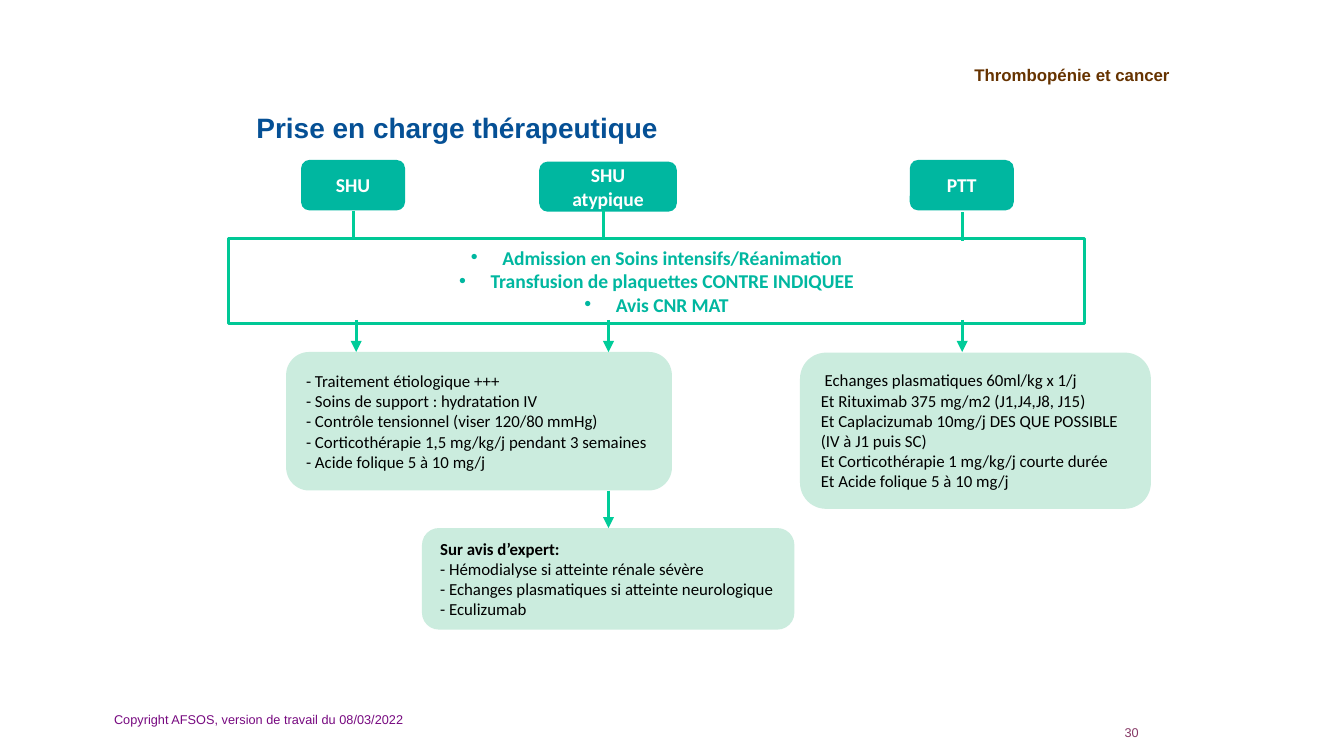
from lxml.etree import SubElement
from pptx import Presentation
from pptx.dml.color import RGBColor
from pptx.enum.shapes import MSO_CONNECTOR, MSO_SHAPE
from pptx.enum.text import MSO_ANCHOR, PP_ALIGN
from pptx.oxml.ns import qn
from pptx.util import Pt


def color(hex_value):
    return RGBColor.from_string(hex_value)


class CareSlide:
    """Style of the care pathway and the slide it is drawn on."""

    HEADER = dict(name="Arial", size=Pt(9), bold=True, color="663300")
    TITLE = dict(name="Arial", size=Pt(15), bold=True, color="055095")
    COPYRIGHT = dict(name="Arial", size=Pt(6.8), bold=False, color="770980")
    PAGE = dict(COPYRIGHT, color="863966")
    DISEASE = dict(name="Calibri", size=Pt(10.5), bold=True, color="FFFFFF")
    COMMON = dict(DISEASE, color="00B7A0")
    CARE = dict(name="Calibri", size=Pt(9), bold=False, color="000000")
    TEAL, MINT, BORDER, ARROW = "00B7A0", "CBECDE", "00C896", "00CC99"

    def __init__(self, slide):
        self.slide = slide

    def set_lines(self, frame, lines, style, align=PP_ALIGN.LEFT,
                  anchor=MSO_ANCHOR.MIDDLE, bullet=False):
        frame.word_wrap = True
        frame.vertical_anchor = anchor
        for index, line in enumerate(lines):
            paragraph = frame.paragraphs[0] if index == 0 else frame.add_paragraph()
            paragraph.alignment = align
            if bullet:
                properties = paragraph._p.get_or_add_pPr()
                properties.set("marL", str(Pt(16.9)))
                properties.set("indent", str(-Pt(16.9)))
                SubElement(properties, qn("a:buFont"), typeface="Arial")
                SubElement(properties, qn("a:buChar"), char="•")
            run = paragraph.add_run()
            run.text = line
            for key, value in style.items():
                if key == "color":
                    run.font.color.rgb = color(value)
                else:
                    setattr(run.font, key, value)
        return frame

    def text(self, box, line, style, **layout):
        area = self.slide.shapes.add_textbox(*map(Pt, box))
        return self.set_lines(area.text_frame, [line], style, **layout)

    def panel(self, box, lines, style, fill=None, **layout):
        kind = MSO_SHAPE.ROUNDED_RECTANGLE if fill else MSO_SHAPE.RECTANGLE
        panel = self.slide.shapes.add_shape(kind, *map(Pt, box))
        panel.shadow.inherit = False
        if fill:
            panel.fill.solid()
            panel.fill.fore_color.rgb = color(fill)
            panel.line.fill.background()
        else:
            panel.fill.background()
            panel.line.color.rgb = color(self.BORDER)
            panel.line.width = Pt(1.5)
        return self.set_lines(panel.text_frame, lines, style, **layout)

    def link(self, x, top, bottom, arrow=False):
        link = self.slide.shapes.add_connector(
            MSO_CONNECTOR.STRAIGHT, Pt(x), Pt(top), Pt(x), Pt(bottom))
        link.line.color.rgb = color(self.ARROW)
        link.line.width = Pt(1.75)
        properties = link._element.spPr
        if arrow:
            SubElement(properties.get_or_add_ln(), qn("a:tailEnd"), type="triangle")
        SubElement(properties, qn("a:effectLst"))


def main():
    presentation = Presentation()
    presentation.slide_width, presentation.slide_height = Pt(720), Pt(405)
    care = CareSlide(presentation.slides.add_slide(presentation.slide_layouts[6]))

    # Header, title and footer
    care.text((422.6, 23.8, 211, 32.4), "Thrombopénie et cancer", care.HEADER,
              align=PP_ALIGN.RIGHT)
    care.text((130.3, 43.2, 459.4, 49.7), "Prise en charge thérapeutique", care.TITLE)
    care.text((54, 374.8, 243.4, 21.6),
              "Copyright AFSOS, version de travail du 08/03/2022", care.COPYRIGHT)
    page = care.text((594.7, 388.1, 23, 8.6), "30", care.PAGE,
                     align=PP_ALIGN.CENTER, anchor=MSO_ANCHOR.TOP)
    for side in ("left", "right", "top", "bottom"):
        setattr(page, f"margin_{side}", 0)

    # Diseases
    for disease, left, top, width, height in (
            ("SHU", 161.3, 85.7, 55.7, 27),
            ("SHU atypique", 288.9, 86.6, 73.7, 26.8),
            ("PTT", 487.4, 85.7, 55.7, 27)):
        care.panel((left, top, width, height), [disease], care.DISEASE, care.TEAL,
                   align=PP_ALIGN.CENTER)

    # Measures common to all three
    care.panel((122.2, 128, 459, 45.4),
               ["Admission en Soins intensifs/Réanimation",
                "Transfusion de plaquettes CONTRE INDIQUEE",
                "Avis CNR MAT"],
               care.COMMON, align=PP_ALIGN.CENTER, anchor=MSO_ANCHOR.TOP, bullet=True)

    # Treatments
    care.panel((428.6, 188.9, 188, 83.7),
               [" Echanges plasmatiques 60ml/kg x 1/j",
                "Et Rituximab 375 mg/m2 (J1,J4,J8, J15)",
                "Et Caplacizumab 10mg/j DES QUE POSSIBLE (IV à J1 puis SC)",
                "Et Corticothérapie 1 mg/kg/j courte durée",
                "Et Acide folique 5 à 10 mg/j"], care.CARE, care.MINT)
    care.panel((153.3, 188.6, 206.7, 74.2),
               ["- Traitement étiologique +++",
                "- Soins de support : hydratation IV",
                "- Contrôle tensionnel (viser 120/80 mmHg)",
                "- Corticothérapie 1,5 mg/kg/j pendant 3 semaines",
                "- Acide folique 5 à 10 mg/j"], care.CARE, care.MINT)
    expert = care.panel((226.1, 282.9, 199.5, 54.4),
                        ["Sur avis d’expert:",
                         "- Hémodialyse si atteinte rénale sévère",
                         "- Echanges plasmatiques si atteinte neurologique",
                         "- Eculizumab"], care.CARE, care.MINT)
    expert.paragraphs[0].runs[0].font.bold = True

    # Links from diseases to measures, then arrows to treatments
    for x, top in ((189.4, 113), (515.5, 113.8), (323.3, 112.5)):
        care.link(x, top, top + 15.1)
    for x in (326, 190.8, 515.5):
        care.link(x, 171.4, 188.6, arrow=True)
    care.link(326, 262.8, 283, arrow=True)

    presentation.save("out.pptx")


if __name__ == "__main__":
    main()
